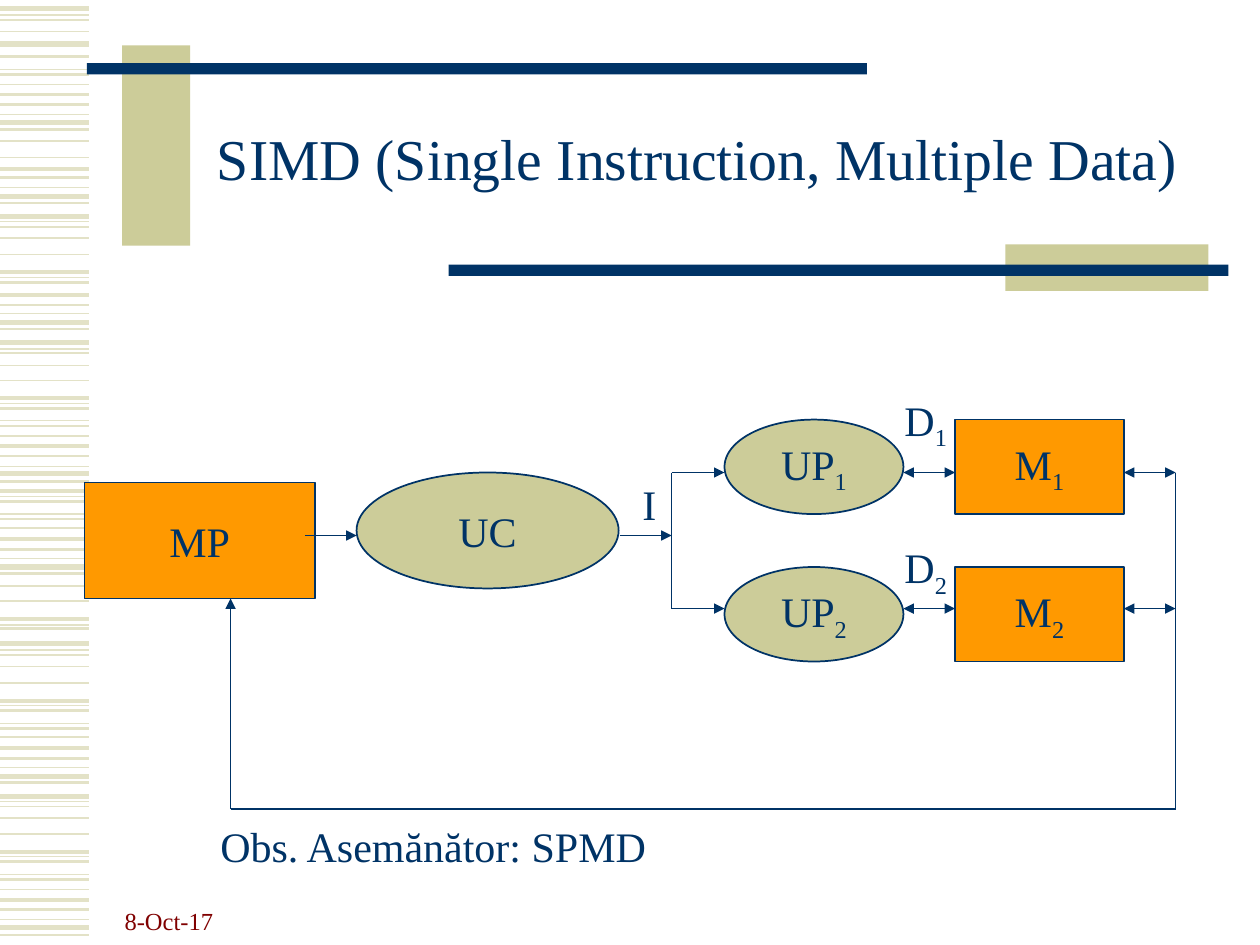
from lxml.etree import SubElement
from pptx import Presentation
from pptx.dml.color import RGBColor
from pptx.enum.shapes import MSO_CONNECTOR, MSO_SHAPE
from pptx.enum.text import MSO_ANCHOR, PP_ALIGN
from pptx.oxml.ns import qn
from pptx.util import Pt

SCALE = 9144
NAVY, SAND, ORANGE, PALE, MAROON = "003366", "CCCC99", "FF9900", "E3E2C7", "800000"
RECT, OVAL = MSO_SHAPE.RECTANGLE, MSO_SHAPE.OVAL

STRIPE_WIDTH = 71
STRIPES = {
    0.75: [12, 55, 91, 149, 176, 220, 249, 277, 320, 334, 370, 394, 408, 443, 496,
           516, 560, 574, 609, 636, 680, 694, 730],
    1: [16, 25, 67, 112, 125, 180, 189, 202, 280, 290, 302, 346, 419, 465, 477,
        520, 529, 542, 585, 640, 649, 662, 706],
    1.5: [45, 59, 83, 103, 141, 161, 224, 242, 261, 324, 338, 362, 382, 398, 412,
          436, 455, 499, 564, 578, 602, 621, 684, 698, 722, 742],
    2.25: [75, 134, 216, 234, 316, 354, 390, 428, 491, 556, 594, 676, 714],
    3: [7, 35, 97, 156, 172, 256, 272, 376, 450, 511, 616, 632, 736],
}
ORNAMENTS = [
    ((97, 36, 54, 159), SAND),
    ((69, 50, 619, 9), NAVY),
    ((798, 194, 161, 37), SAND),
    ((356, 210, 619, 9), NAVY),
]
TITLE = "SIMD (Single Instruction, Multiple Data)"
DATE = "8-Oct-17"
NOTE = "Obs. Asemănător: SPMD"

BUS_LEFT, BUS_RIGHT, BUS_BOTTOM = 533, 933, 642
RETURN_X, MP_BOTTOM, FLOW_Y = 183, 475, 425
UP_LEFT, UP_RIGHT, M_LEFT, M_RIGHT = 575, 717, 758, 892
LANES = [("1", 333, 375, 308), ("2", 450, 483, 425)]

NODES = [
    (RECT, (67, 383, 183, 92), ORANGE, "MP", ""),
    (OVAL, (283, 375, 208, 92), SAND, "UC", ""),
]
LABELS = [((500, 375, 42, 50), "I", "")]
LINES = [
    ((242, FLOW_Y), (283, FLOW_Y), "tail"),
    ((492, FLOW_Y), (BUS_LEFT, FLOW_Y), "tail"),
    ((BUS_LEFT, LANES[0][2]), (BUS_LEFT, LANES[1][2]), ""),
    ((BUS_RIGHT, LANES[0][2]), (BUS_RIGHT, BUS_BOTTOM), ""),
    ((BUS_RIGHT, BUS_BOTTOM), (RETURN_X, BUS_BOTTOM), ""),
    ((RETURN_X, BUS_BOTTOM), (RETURN_X, MP_BOTTOM), "tail"),
]
for number, top, lane_y, label_top in LANES:
    NODES += [
        (OVAL, (UP_LEFT, top, UP_RIGHT - UP_LEFT, 75), SAND, "UP", number),
        (RECT, (M_LEFT, top, M_RIGHT - M_LEFT, 75), ORANGE, "M", number),
    ]
    LABELS.append(((708, label_top, 58, 50), "D", number))
    LINES += [
        ((BUS_LEFT, lane_y), (UP_LEFT, lane_y), "tail"),
        ((UP_RIGHT, lane_y), (M_LEFT, lane_y), "head tail"),
        ((M_RIGHT, lane_y), (BUS_RIGHT, lane_y), "head tail"),
    ]


def emu(*lengths):
    return [length * SCALE for length in lengths]


def color(code):
    return RGBColor.from_string(code)


def apply(target, values):
    for name, value in values.items():
        setattr(target, name, value)


def add_line(page, start, end, code, weight, arrows=""):
    line = page.shapes.add_connector(MSO_CONNECTOR.STRAIGHT, *emu(*start, *end))
    line.line.color.rgb = color(code)
    line.line.width = Pt(weight)
    outline = line.line._get_or_add_ln()
    for side in arrows.split():
        SubElement(outline, qn(f"a:{side}End"), type="triangle")
    SubElement(line._element.spPr, qn("a:effectLst"))


def add_block(page, kind, place, fill, outlined=False):
    block = page.shapes.add_shape(kind, *emu(*place))
    block.shadow.inherit = False
    block.fill.solid()
    block.fill.fore_color.rgb = color(fill)
    if outlined:
        block.line.color.rgb = color(NAVY)
        block.line.width = Pt(1)
    else:
        block.line.fill.background()
    return block


def write(box, text, subscript="", size=24, code=NAVY, frame=None, layout=None):
    apply(box.text_frame, {"word_wrap": True, **(frame or {})})
    para = box.text_frame.paragraphs[0]
    apply(para, layout or {})
    for part in filter(None, (text, subscript)):
        span = para.add_run()
        span.text = part
        apply(span.font, {"size": Pt(size), "name": "Times New Roman"})
        span.font.color.rgb = color(code)
    if subscript:
        span._r.get_or_add_rPr().set("baseline", "-25000")


def add_text(page, place, text, **options):
    write(page.shapes.add_textbox(*emu(*place)), text, **options)


def main():
    deck = Presentation()
    deck.slide_width, deck.slide_height = emu(1000, 750)
    page = deck.slides.add_slide(deck.slide_layouts[6])

    for weight, heights in STRIPES.items():
        for y in heights:
            add_line(page, (0, y), (STRIPE_WIDTH, y), PALE, weight)
    for place, fill in ORNAMENTS:
        add_block(page, RECT, place, fill)

    add_text(page, (89, 697, 208, 50), DATE, size=14, code=MAROON,
             frame={"vertical_anchor": MSO_ANCHOR.BOTTOM})
    add_text(page, (150, 67, 807, 125), TITLE, size=33,
             frame={"vertical_anchor": MSO_ANCHOR.MIDDLE},
             layout={"alignment": PP_ALIGN.CENTER, "line_spacing": 0.85})

    for kind, place, fill, text, subscript in NODES:
        write(add_block(page, kind, place, fill, True), text, subscript,
              frame={"word_wrap": False, "vertical_anchor": MSO_ANCHOR.MIDDLE},
              layout={"alignment": PP_ALIGN.CENTER})
    for start, end, arrows in LINES:
        add_line(page, start, end, NAVY, 1, arrows)
    for place, text, subscript in LABELS:
        add_text(page, place, text, subscript=subscript)
    add_text(page, (165, 646, 360, 50), NOTE, frame={"word_wrap": False})

    deck.save("out.pptx")


if __name__ == "__main__":
    main()
